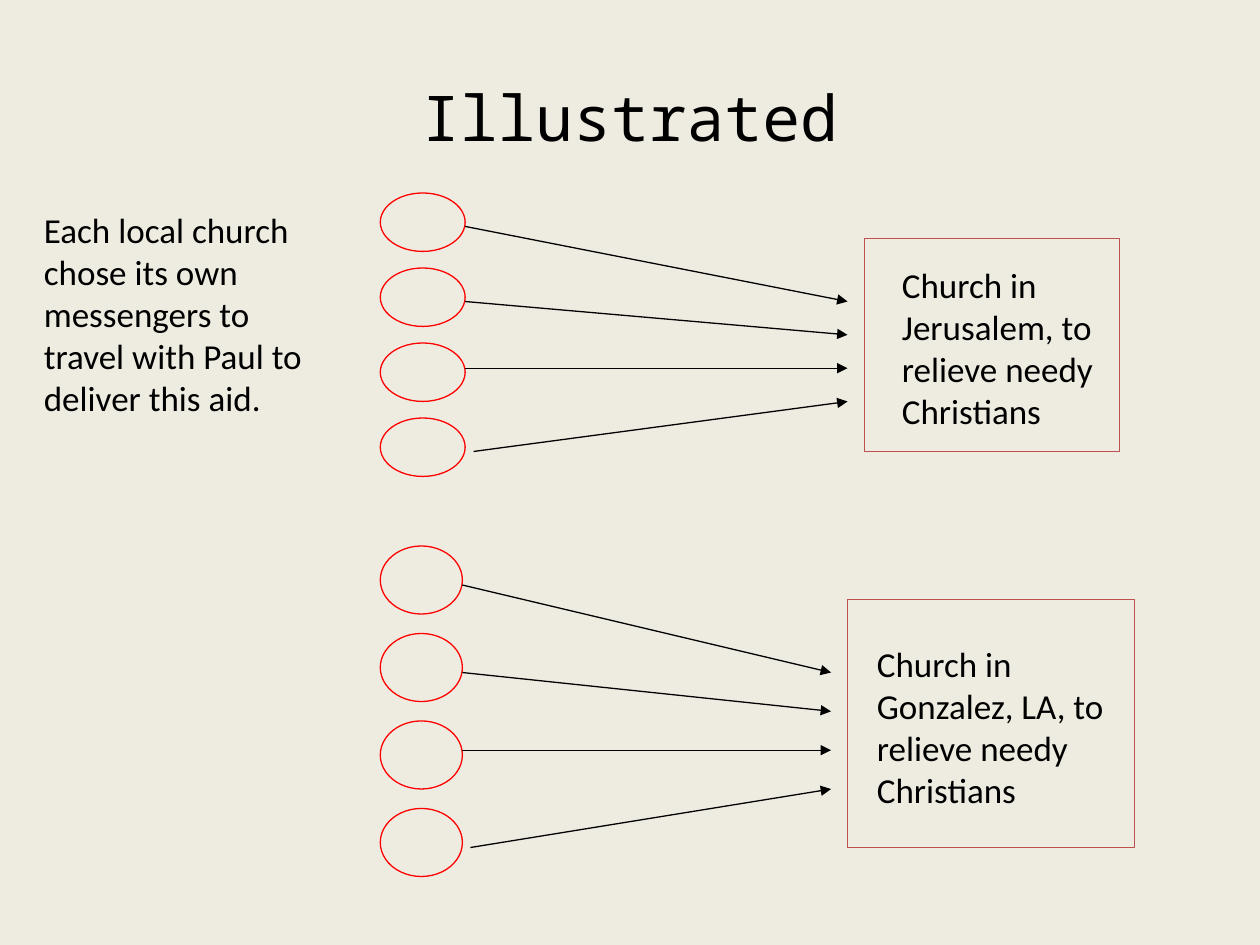
from dataclasses import dataclass

from lxml import etree
from pptx import Presentation
from pptx import util as u
from pptx.dml.color import RGBColor
from pptx.enum import shapes, text
from pptx.oxml.ns import qn

COLOURS = {"paper": "EEECE1", "ink": "000000", "giver": "FF0000", "receiver": "C0504D"}
LINE_WIDTH = 0.75


@dataclass(frozen=True)
class Area:
    left: float
    top: float
    width: float
    height: float

    def in_points(self) -> list:
        return [u.Pt(n) for n in (self.left, self.top, self.width, self.height)]


@dataclass(frozen=True)
class Arrow:
    x: float
    y: float


@dataclass(frozen=True)
class Relief:
    first_giver: Area
    giver_pitch: float
    arrow_starts: tuple[Arrow, ...]
    first_end: Arrow
    end_pitch: float
    receiver: Area
    message: Area
    wording: str


RELIEFS = (
    Relief(
        Area(217.3, 110.3, 48.5, 33.4), 42.86,
        (Arrow(265.8, 129.4), Arrow(265.8, 172.3), Arrow(265.8, 210.4), Arrow(270.6, 258)),
        Arrow(484.3, 172.3), 19.05,
        Area(494, 136.5, 145.7, 121.5), Area(508.3, 147, 141, 104.6),
        "Church in Jerusalem, to relieve needy Christians",
    ),
    Relief(
        Area(217.3, 312, 46.9, 38.9), 50,
        (Arrow(264.2, 334.3), Arrow(264.2, 384.3), Arrow(264.2, 428.7), Arrow(268.8, 484.3)),
        Arrow(474.9, 384.3), 22.2,
        Area(484.3, 342.6, 164.1, 141.7), Area(494, 363.8, 154.8, 104.6),
        "Church in Gonzalez, LA, to relieve needy Christians",
    ),
)


def colour(name: str) -> RGBColor:
    return RGBColor.from_string(COLOURS[name])


def draw_outline(canvas, kind, area: Area, edge: str) -> None:
    outline = canvas.add_shape(kind, *area.in_points())
    outline.shadow.inherit = False
    outline.fill.solid()
    outline.fill.fore_color.rgb = colour("paper")
    outline.line.color.rgb = colour(edge)
    outline.line.width = u.Pt(LINE_WIDTH)


def draw_arrow(canvas, start: Arrow, end: Arrow) -> None:
    arrow = canvas.add_connector(
        shapes.MSO_CONNECTOR.STRAIGHT,
        u.Pt(start.x), u.Pt(start.y), u.Pt(end.x), u.Pt(end.y),
    )
    arrow.line.color.rgb = colour("ink")
    arrow.line.width = u.Pt(LINE_WIDTH)
    etree.SubElement(arrow.line._get_or_add_ln(), qn("a:tailEnd"), type="triangle")
    etree.SubElement(arrow._element.spPr, qn("a:effectLst"))


def write(canvas, area: Area, wording: str, font: str = "Calibri", size: float = 20,
          align=text.PP_ALIGN.LEFT, anchor=text.MSO_ANCHOR.TOP) -> None:
    frame = canvas.add_textbox(*area.in_points()).text_frame
    frame.word_wrap = True
    frame.vertical_anchor = anchor
    paragraph = frame.paragraphs[0]
    paragraph.text = wording
    paragraph.alignment = align
    paragraph.font.name = font
    paragraph.font.size = u.Pt(size)
    paragraph.font.color.rgb = colour("ink")


def draw_relief(slide, relief: Relief) -> None:
    canvas = slide.shapes.add_group_shape().shapes
    giver = relief.first_giver
    for i in range(len(relief.arrow_starts)):
        place = Area(giver.left, giver.top + i * relief.giver_pitch, giver.width, giver.height)
        draw_outline(canvas, shapes.MSO_SHAPE.OVAL, place, "giver")
    draw_outline(canvas, shapes.MSO_SHAPE.RECTANGLE, relief.receiver, "receiver")
    for i, start in enumerate(relief.arrow_starts):
        end = Arrow(relief.first_end.x, relief.first_end.y + i * relief.end_pitch)
        draw_arrow(canvas, start, end)
    write(canvas, relief.message, relief.wording)


def main() -> None:
    deck = Presentation()
    deck.slide_width, deck.slide_height = u.Pt(720), u.Pt(540)
    slide = deck.slides.add_slide(deck.slide_layouts[6])
    slide.background.fill.solid()
    slide.background.fill.fore_color.rgb = colour("paper")
    write(slide.shapes, Area(36, 21.6, 648, 90), "Illustrated", "Noto Sans Mono", 36,
          text.PP_ALIGN.CENTER, text.MSO_ANCHOR.MIDDLE)
    for relief in RELIEFS:
        draw_relief(slide, relief)
    write(slide.shapes, Area(18, 115.5, 174, 128),
          "Each local church chose its own messengers to travel with Paul to deliver this aid.")
    deck.save("out.pptx")


if __name__ == "__main__":
    main()
